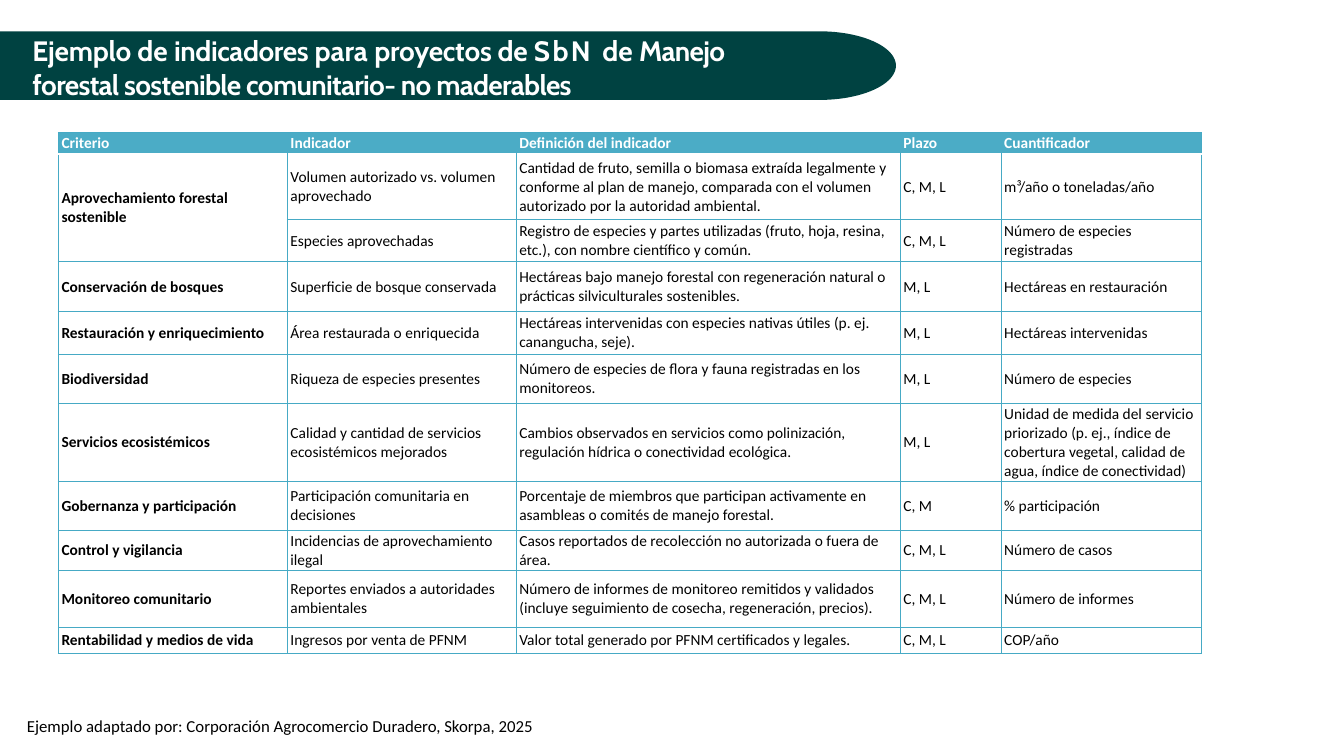
from math import cos, pi, sin
from lxml.etree import SubElement
from pptx import Presentation
from pptx.dml.color import RGBColor
from pptx.enum.text import MSO_ANCHOR
from pptx.oxml.ns import qn
from pptx.util import Cm, Pt

DARK, HEAD, LINE, WHITE, BLACK = "004241", "4BACC6", "46AAC5", "FFFFFF", "000000"
TITLE = [("Ejemplo ", -0.2), ("de ", 0), ("indicadores ", -0.3), ("para ", 0),
         ("proyectos de ", -0.2), ("SbN ", 1.9), ("de ", 0),
         ("Manejo forestal sostenible comunitario- no maderables", -0.5)]
NOTE = "Ejemplo adaptado por: Corporación Agrocomercio Duradero, Skorpa, 2025"
COLS = [5.77, 5.77, 9.68, 2.54, 5.04]
ROWS = [
    (0.53, "Criterio", "Indicador", "Definición del indicador", "Plazo", "Cuantificador"),
    (1.65, "Aprovechamiento forestal sostenible", "Volumen autorizado vs. volumen aprovechado",
     "Cantidad de fruto, semilla o biomasa extraída legalmente y conforme al plan de manejo, "
     "comparada con el volumen autorizado por la autoridad ambiental.",
     "C, M, L", "m³/año o toneladas/año"),
    (1.07, "", "Especies aprovechadas",
     "Registro de especies y partes utilizadas (fruto, hoja, resina, etc.), "
     "con nombre científico y común.", "C, M, L", "Número de especies registradas"),
    (1.25, "Conservación de bosques", "Superficie de bosque conservada",
     "Hectáreas bajo manejo forestal con regeneración natural o prácticas "
     "silviculturales sostenibles.", "M, L", "Hectáreas en restauración"),
    (1.07, "Restauración y enriquecimiento", "Área restaurada o enriquecida",
     "Hectáreas intervenidas con especies nativas útiles (p. ej. canangucha, seje).",
     "M, L", "Hectáreas intervenidas"),
    (1.25, "Biodiversidad", "Riqueza de especies presentes",
     "Número de especies de flora y fauna registradas en los monitoreos.",
     "M, L", "Número de especies"),
    (1.95, "Servicios ecosistémicos", "Calidad y cantidad de servicios ecosistémicos mejorados",
     "Cambios observados en servicios como polinización, regulación hídrica o "
     "conectividad ecológica.", "M, L",
     "Unidad de medida del servicio priorizado (p. ej., índice de cobertura vegetal, "
     "calidad de agua, índice de conectividad)"),
    (1.25, "Gobernanza y participación", "Participación comunitaria en decisiones",
     "Porcentaje de miembros que participan activamente en asambleas o comités de "
     "manejo forestal.", "C, M", "% participación"),
    (0.98, "Control y vigilancia", "Incidencias de aprovechamiento ilegal",
     "Casos reportados de recolección no autorizada o fuera de área.",
     "C, M, L", "Número de casos"),
    (1.45, "Monitoreo comunitario", "Reportes enviados a autoridades ambientales",
     "Número de informes de monitoreo remitidos y validados (incluye seguimiento de "
     "cosecha, regeneración, precios).", "C, M, L", "Número de informes"),
    (0.66, "Rentabilidad y medios de vida", "Ingresos por venta de PFNM",
     "Valor total generado por PFNM certificados y legales.", "C, M, L", "COP/año"),
]


def tint(code):
    """Turn a hex string into a colour."""
    return RGBColor.from_string(code)


def write(frame, text, font="Calibri", size=11, color=BLACK, bold=False, space=1.0, after=0):
    """Fill a frame with one paragraph of text, or of (text, tracking) runs."""
    frame.word_wrap = True
    para = frame.paragraphs[0]
    para.line_spacing, para.space_after = space, Pt(after)
    for words, track in [(text, 0)] if isinstance(text, str) else text:
        run = para.add_run()
        run.text = words
        run.font.name, run.font.size, run.font.bold = font, Pt(size), bold
        run.font.color.rgb = tint(color)
        if track:
            run.font._element.set("spc", str(round(track * 100)))


def edge(cell, side, color=LINE, width=0.75):
    """Draw one border of a cell, or clear it when color is None."""
    line = SubElement(cell._tc.get_or_add_tcPr(), qn("a:ln" + side), w=str(Pt(width)))
    if color:
        SubElement(SubElement(line, qn("a:solidFill")), qn("a:srgbClr"), val=color)
    else:
        SubElement(line, qn("a:noFill"))


def banner(slide, left, top, width, height):
    """Draw the round-ended band and its title."""
    cap, half = 1.93, height / 2
    arc = [(left + width - cap + cap * cos(t), top + half + half * sin(t))
           for t in (pi * (n / 48 - 0.5) for n in range(49))]
    dots = [(Cm(x), Cm(y)) for x, y in arc + [(left, top + height)]]
    build = slide.shapes.build_freeform(Cm(left), Cm(top))
    build.add_line_segments(dots, close=True)
    band = build.convert_to_shape()
    band.shadow.inherit = False
    band.fill.solid()
    band.fill.fore_color.rgb = tint(DARK)
    band.line.fill.background()
    box = slide.shapes.add_textbox(Cm(left + 0.82), Cm(top + 0.02), Cm(19.46), Cm(height - 0.02))
    frame = box.text_frame
    frame.margin_left = frame.margin_right = frame.margin_top = frame.margin_bottom = 0
    write(frame, TITLE, font="Cabin", size=20, color=WHITE, bold=True, space=1.03)


def grid(slide, left, top):
    """Place the table of criteria and indicators."""
    tall = sum(row[0] for row in ROWS)
    table = slide.shapes.add_table(len(ROWS), len(COLS), Cm(left), Cm(top),
                                   Cm(sum(COLS)), Cm(tall)).table
    table.horz_banding = False
    for col, wide in zip(table.columns, COLS):
        col.width = Cm(wide)
    for r, (high, *words) in enumerate(ROWS):
        table.rows[r].height = Cm(high)
        for c, text in enumerate(words):
            cell, head = table.cell(r, c), r == 0
            cell.vertical_anchor = MSO_ANCHOR.MIDDLE
            cell.margin_left = cell.margin_right = Cm(0.08)
            cell.margin_top = cell.margin_bottom = Cm(0.03)
            edge(cell, "L", None if head and c > 0 else LINE)
            edge(cell, "R", None if head and c < len(COLS) - 1 else LINE)
            edge(cell, "T", *((WHITE, 2) if r == 1 else ()))
            edge(cell, "B", *((WHITE, 2) if head else ()))
            cell.fill.solid()
            cell.fill.fore_color.rgb = tint(HEAD if head else WHITE)
            if text:
                write(cell.text_frame, text, color=WHITE if head else BLACK,
                      bold=head or c == 0)
    table.cell(1, 0).merge(table.cell(2, 0))


def credit(slide, left, top, width, height):
    """Place the line that names the source."""
    box = slide.shapes.add_textbox(Cm(left), Cm(top), Cm(width), Cm(height))
    write(box.text_frame, NOTE, size=12, space=1.07, after=8)


def main():
    """Build the slide and save it."""
    deck = Presentation()
    deck.slide_width, deck.slide_height = Cm(33.87), Cm(19.05)
    slide = deck.slides.add_slide(deck.slide_layouts[6])
    banner(slide, 0, 0.79, 22.58, 1.73)
    credit(slide, 0.43, 17.88, 26.04, 0.79)
    grid(slide, 1.47, 3.35)
    deck.save("out.pptx")


if __name__ == "__main__":
    main()
